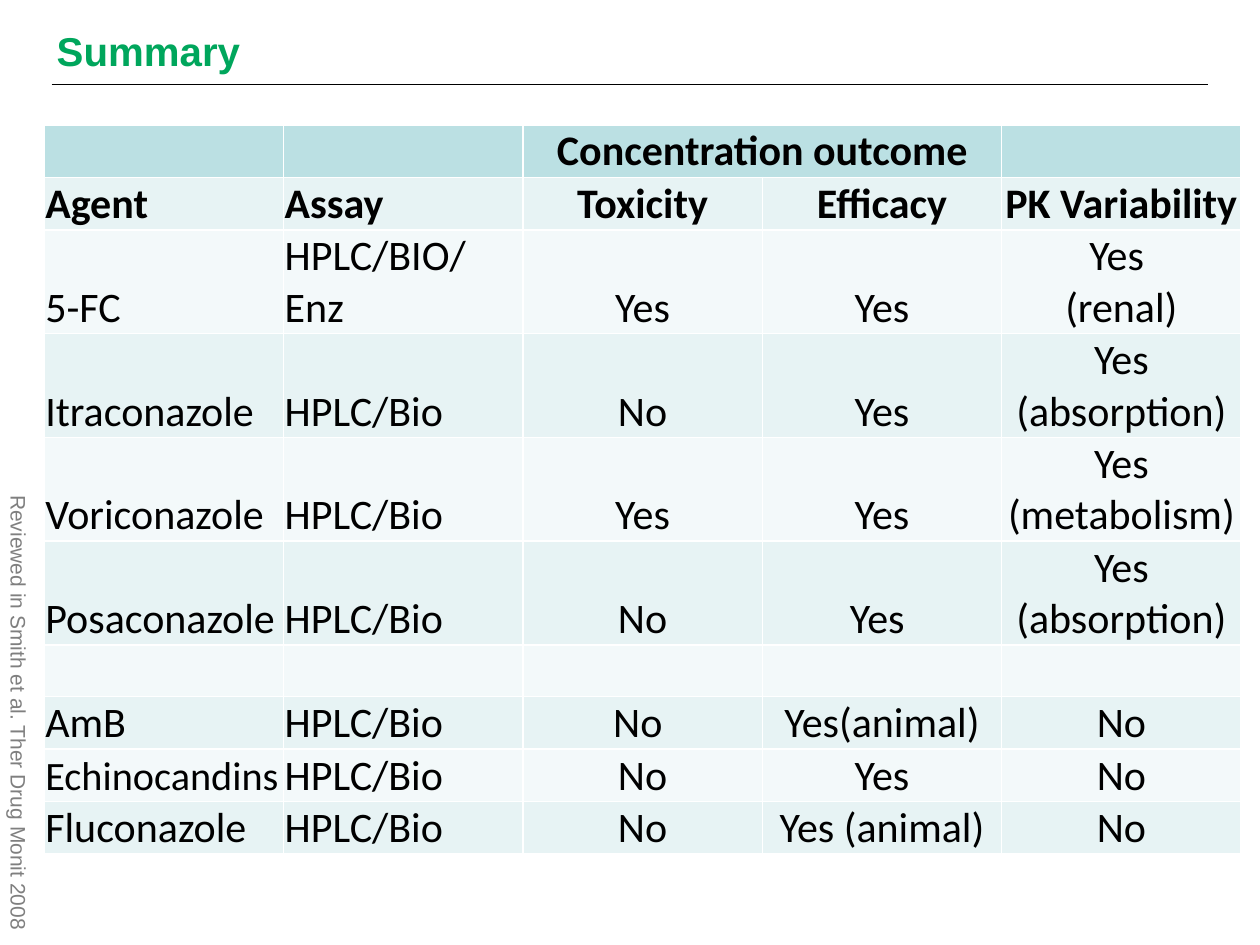
from dataclasses import dataclass
from lxml import etree
from pptx import Presentation
from pptx.dml.color import RGBColor as RGB
from pptx.enum.shapes import MSO_CONNECTOR as Conn
from pptx.enum.text import MSO_ANCHOR as Anchor, PP_ALIGN as Align
from pptx.oxml.ns import qn
from pptx.util import Inches, Pt


@dataclass
class Theme:
    title: RGB = RGB.from_string("00A65C")
    ink: RGB = RGB.from_string("000000")
    source: RGB = RGB.from_string("7F7F7F")
    header: RGB = RGB.from_string("BBE0E3")
    bands: tuple = (RGB.from_string("F3F9FA"), RGB.from_string("E7F3F4"))
    title_size: int = 23
    table_size: int = 24
    tight_size: int = 23
    source_size: int = 12
    heading_font: str = "Arial"
    table_font: str = "Calibri"


def style(p, name, size, color, bold=False, align=Align.LEFT):
    p.alignment = align
    for key, value in {"name": name, "size": Pt(size), "bold": bold}.items():
        setattr(p.font, key, value)
    p.font.color.rgb = color


def set_margins(box, left, top, right, bottom):
    margins = {"left": left, "top": top, "right": right, "bottom": bottom}
    for side, value in margins.items():
        setattr(box, f"margin_{side}", Inches(value))


theme = Theme()
prs = Presentation()
prs.slide_width, prs.slide_height = Inches(10), Inches(7.5)
s = prs.slides.add_slide(prs.slide_layouts[5])

title = s.shapes.title
frame = {"left": 0.35, "top": 0.21, "width": 9.43, "height": 0.38}
for key, value in frame.items():
    setattr(title, key, Inches(value))
tf = title.text_frame
tf.text = "Summary"
tf.vertical_anchor = Anchor.MIDDLE
set_margins(tf, 0.1, 0, 0.1, 0)
style(tf.paragraphs[0], theme.heading_font, theme.title_size, theme.title, True)

rule = s.shapes.add_connector(Conn.STRAIGHT, Inches(0.41), Inches(0.67), Inches(9.59), Inches(0.67))
rule.line.color.rgb = theme.ink
rule.line.width = Pt(0.25)
etree.SubElement(rule._element.spPr, qn("a:effectLst"))

rows = [
    ["", "", "Concentration outcome", "", ""],
    ["Agent", "Assay", "Toxicity", "Efficacy", "PK Variability"],
    ["5-FC", "HPLC/BIO/Enz", "Yes", "Yes", "Yes \n(renal)"],
    ["Itraconazole", "HPLC/Bio", "No", "Yes", "Yes (absorption)"],
    ["Voriconazole", "HPLC/Bio", "Yes", "Yes", "Yes (metabolism)"],
    ["Posaconazole", "HPLC/Bio", "No", "Yes ", "Yes (absorption)"],
    ["", "", "", "", ""],
    ["AmB", "HPLC/Bio", "No ", "Yes(animal)", "No"],
    ["Echinocandins", "HPLC/Bio", "No", "Yes", "No"],
    ["Fluconazole", "HPLC/Bio", "No", "Yes (animal)", "No"],
]
row_height, col_width = 0.41, 1.9
table = s.shapes.add_table(
    len(rows), len(rows[0]), Inches(0.35), Inches(0.99),
    Inches(col_width * len(rows[0])), Inches(row_height * len(rows)),
).table
table.cell(0, 2).merge(table.cell(0, 3))

for i, row in enumerate(rows):
    for j, text in enumerate(row):
        cell = table.cell(i, j)
        cell.fill.solid()
        cell.fill.fore_color.rgb = theme.bands[i % 2] if i else theme.header
        cell.vertical_anchor = Anchor.BOTTOM
        set_margins(cell, 0.01, 0.01, 0.01, 0)
        if not text:
            continue
        cell.text = text
        size = theme.tight_size if text == "Echinocandins" else theme.table_size
        align = Align.LEFT if j < 2 else Align.CENTER
        for p in cell.text_frame.paragraphs:
            style(p, theme.table_font, size, theme.ink, i < 2, align)

source = s.shapes.add_textbox(Inches(-1.78), Inches(5.4), Inches(3.86), Inches(0.3))
source.rotation = 90
tf = source.text_frame
tf.word_wrap = True
tf.text = "Reviewed in Smith et al. Ther Drug Monit 2008"
style(tf.paragraphs[0], theme.heading_font, theme.source_size, theme.source, align=Align.RIGHT)

prs.save("out.pptx")
